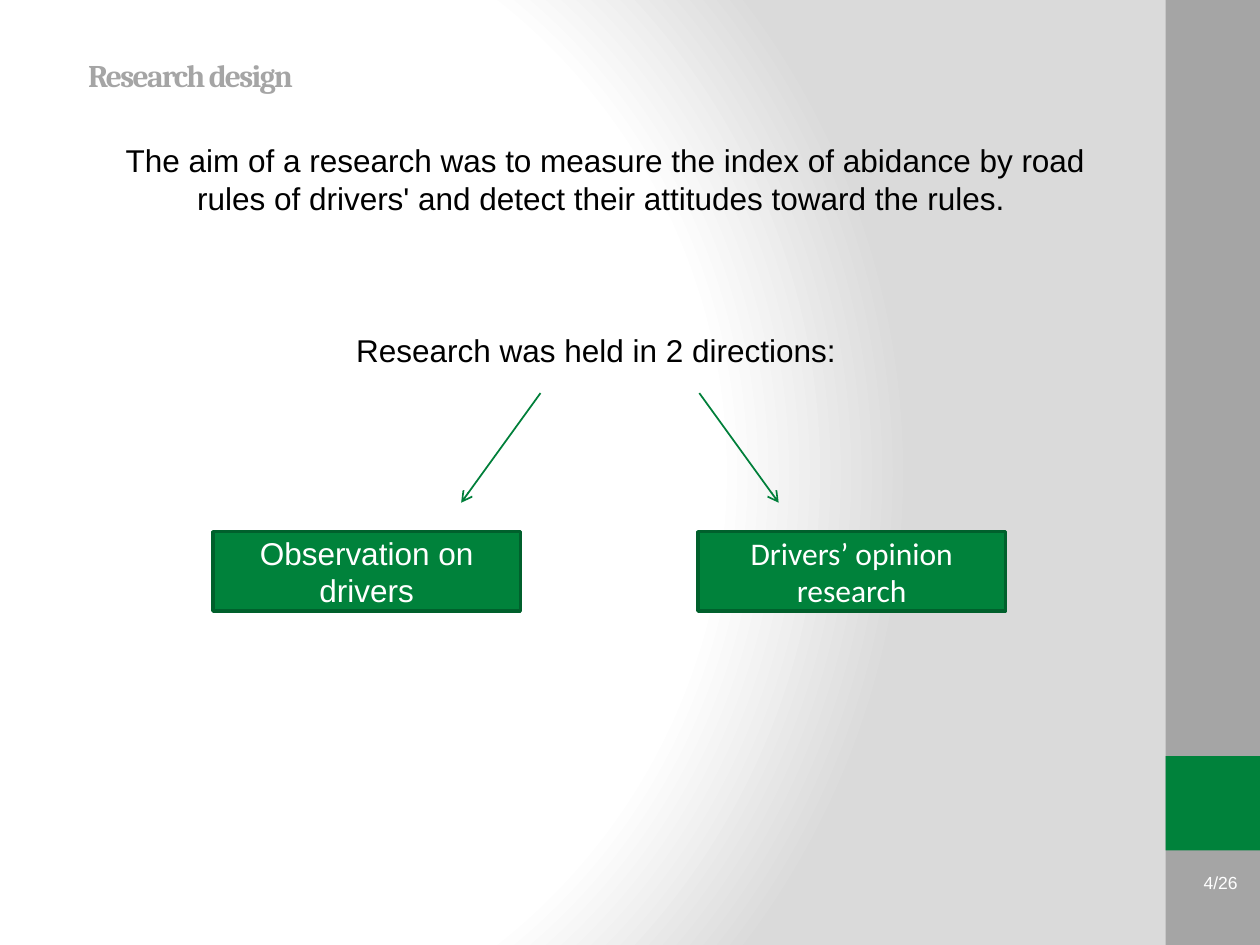
from lxml.etree import SubElement
from pptx import Presentation
from pptx.dml.color import RGBColor
from pptx.enum.shapes import MSO_CONNECTOR, MSO_SHAPE
from pptx.enum.text import MSO_ANCHOR, PP_ALIGN
from pptx.oxml import parse_xml
from pptx.oxml.ns import nsdecls, qn
from pptx.util import Inches, Pt

GREEN, DARK_GREEN, ARROW_GREEN = "00823B", "00602C", "007F3A"
GRAY, PALE_GRAY, WHITE, BLACK = "A5A5A5", "DADADA", "FFFFFF", "000000"


def color(value):
    return RGBColor.from_string(value)


def write(frame, text, font="Arial", size=18, fill=BLACK, bold=False,
          align=PP_ALIGN.CENTER, anchor=MSO_ANCHOR.TOP, spacing=None):
    frame.word_wrap = True
    frame.vertical_anchor = anchor
    para = frame.paragraphs[0]
    para.alignment = align
    span = para.add_run()
    span.text = text
    span.font.name = font
    span.font.size = Pt(size)
    span.font.bold = bold
    span.font.color.rgb = color(fill)
    if spacing is not None:
        span.font._element.set("spc", str(spacing * 100))


class SlideBuilder:
    def __init__(self, deck):
        self.page = deck.slides.add_slide(deck.slide_layouts[5])
        self.shapes = self.page.shapes

    def background(self):
        stops = "".join(
            f'<a:gs pos="{position * 1000}"><a:srgbClr val="{value}"/></a:gs>'
            for position, value in ((0, WHITE), (75, WHITE), (100, PALE_GRAY)))
        self.page.element.cSld.insert(0, parse_xml(
            f'<p:bg {nsdecls("p", "a")}><p:bgPr><a:gradFill rotWithShape="1">'
            f'<a:gsLst>{stops}</a:gsLst><a:path path="circle">'
            '<a:fillToRect l="20000" t="50000" r="100000" b="50000"/></a:path>'
            '</a:gradFill><a:effectLst/></p:bgPr></p:bg>'))

    def title(self, text, left, top, width, height):
        box = self.shapes.title
        box.left, box.top = Inches(left), Inches(top)
        box.width, box.height = Inches(width), Inches(height)
        write(box.text_frame, text, font="Cambria", fill=GRAY, bold=True,
              align=PP_ALIGN.LEFT, anchor=MSO_ANCHOR.MIDDLE, spacing=-1)

    def text(self, text, left, top, width, height, **style):
        box = self.shapes.add_textbox(Inches(left), Inches(top), Inches(width), Inches(height))
        write(box.text_frame, text, **style)

    def block(self, left, top, width, height, fill, outline=None):
        box = self.shapes.add_shape(MSO_SHAPE.RECTANGLE, Inches(left), Inches(top),
                                    Inches(width), Inches(height))
        box.shadow.inherit = False
        box.fill.solid()
        box.fill.fore_color.rgb = color(fill)
        if outline:
            box.line.color.rgb = color(outline)
            box.line.width = Pt(2)
        else:
            box.line.fill.background()
        return box

    def direction(self, text, left, font):
        box = self.block(left, 4.22, 2.44, 0.63, GREEN, DARK_GREEN)
        write(box.text_frame, text, font=font, fill=WHITE, anchor=MSO_ANCHOR.MIDDLE)

    def arrow(self, start, end):
        top, bottom = 3.12, 3.99
        line = self.shapes.add_connector(MSO_CONNECTOR.STRAIGHT, Inches(start), Inches(top),
                                         Inches(end), Inches(bottom))
        line.line.color.rgb = color(ARROW_GREEN)
        line.line.width = Pt(1)
        SubElement(line.line._get_or_add_ln(), qn("a:tailEnd"), type="arrow")
        SubElement(line._element.spPr, qn("a:effectLst"))


def main():
    deck = Presentation()
    deck.slide_width, deck.slide_height = Inches(10), Inches(7.5)
    slide = SlideBuilder(deck)
    slide.background()
    slide.block(9.25, 0, 0.75, 7.5, GRAY)
    slide.block(9.25, 6, 0.75, 0.75, GREEN)
    slide.text("4/26", 9.33, 6.79, 0.59, 0.42, size=10, fill=WHITE,
               align=PP_ALIGN.RIGHT, anchor=MSO_ANCHOR.MIDDLE)
    slide.text("The aim of a research was to measure the index of abidance by road rules "
               "of drivers' and detect their attitudes toward the rules. ",
               0.75, 1.07, 8.11, 0.71)
    slide.title("Research design", 0.6, 0.29, 8.33, 0.61)
    slide.text("Research was held in 2 directions: ", 1.15, 2.58, 7.23, 0.4)
    slide.arrow(4.29, 3.66)
    slide.arrow(5.55, 6.18)
    slide.direction("Observation on drivers", 1.69, "Arial")
    slide.direction("Drivers’ opinion research", 5.54, "Calibri")
    deck.save("out.pptx")


if __name__ == "__main__":
    main()
